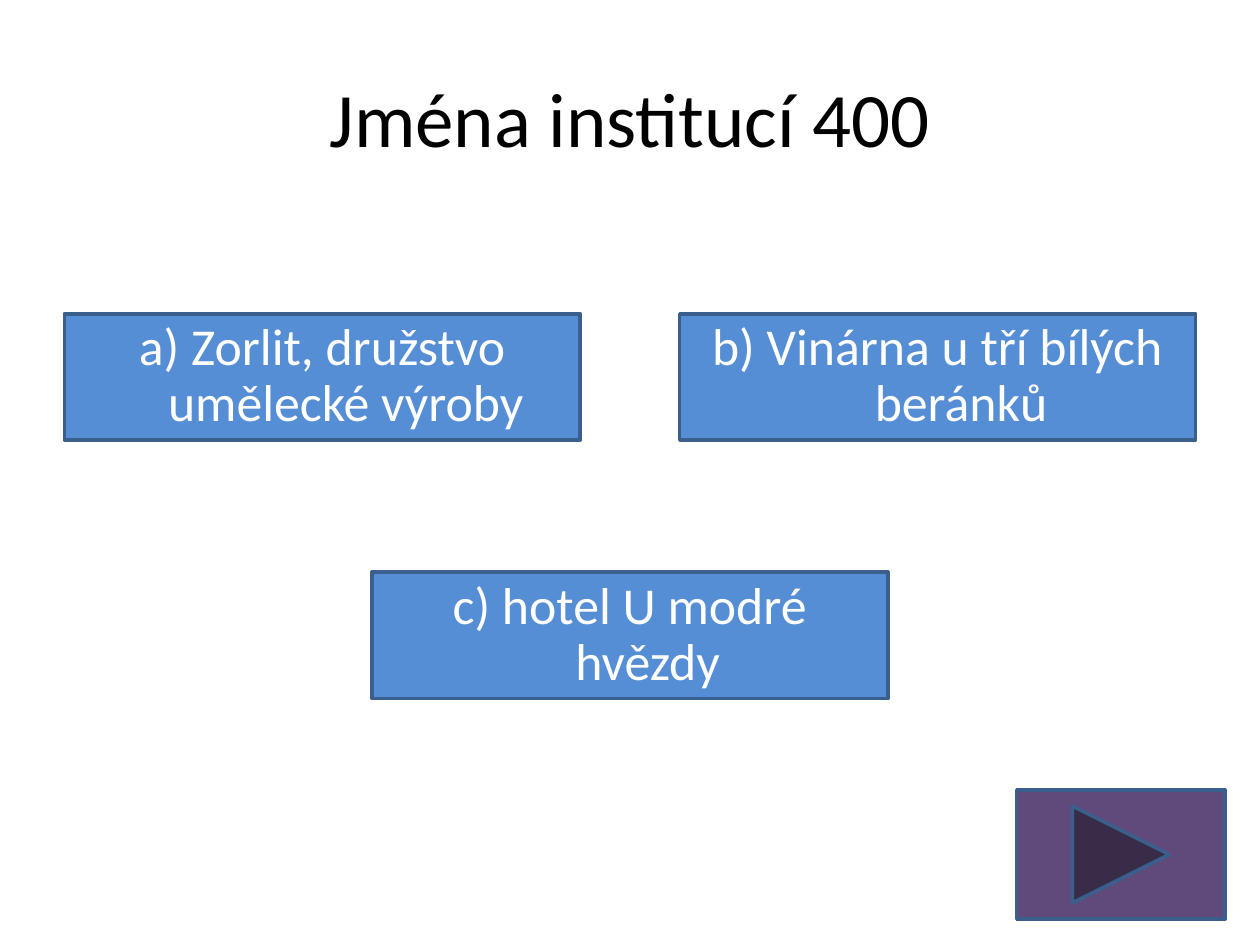
from pptx import Presentation
from pptx.dml.color import RGBColor
from pptx.enum.shapes import MSO_SHAPE
from pptx.enum.text import MSO_ANCHOR, PP_ALIGN
from pptx.util import Pt

BLANK_BUTTON = MSO_SHAPE.ACTION_BUTTON_CUSTOM
NEXT_BUTTON = MSO_SHAPE.ACTION_BUTTON_FORWARD_OR_NEXT
CENTER = PP_ALIGN.CENTER
MIDDLE = MSO_ANCHOR.MIDDLE

COLORS = {
    "title": "000000",
    "answer": "558ED5",
    "answer_text": "FFFFFF",
    "next": "604A7B",
    "line": "3A5F8C",
}
TITLE_FONT = {"name": "Calibri", "size": Pt(44)}
ANSWER_FONT = {"name": "Calibri", "size": Pt(29.6)}
ANSWER_PARAGRAPH = {"alignment": CENTER, "line_spacing": 0.9, "space_before": Pt(6)}

SLIDE_W, SLIDE_H = 720, 540
ANSWER_W, ANSWER_H = 294.8, 72.2
HANGING = 27


def rgb(name):
    return RGBColor.from_string(COLORS[name])


def set_attrs(obj, values):
    for name, value in values.items():
        setattr(obj, name, value)


def place(sp, box):
    sp.left, sp.top, sp.width, sp.height = (Pt(v) for v in box)


def write(sp, text, font, color, paragraph):
    tf = sp.text_frame
    set_attrs(tf, {"word_wrap": True, "vertical_anchor": MIDDLE})
    p = tf.paragraphs[0]
    set_attrs(p, paragraph)
    r = p.add_run()
    r.text = text
    set_attrs(r.font, font)
    r.font.color.rgb = rgb(color)
    return p


def add_button(s, kind, box, fill):
    sp = s.shapes.add_shape(kind, *(Pt(v) for v in box))
    sp.shadow.inherit = False
    sp.fill.solid()
    sp.fill.fore_color.rgb = rgb(fill)
    sp.line.color.rgb = rgb("line")
    sp.line.width = Pt(2)
    return sp


def add_title(s, box, text):
    sp = s.shapes.title
    place(sp, box)
    write(sp, text, TITLE_FONT, "title", {"alignment": CENTER})


def add_answer(s, box, text):
    sp = add_button(s, BLANK_BUTTON, box, "answer")
    p = write(sp, text, ANSWER_FONT, "answer_text", ANSWER_PARAGRAPH)
    # Hanging indent
    pPr = p._p.get_or_add_pPr()
    pPr.set("marL", str(Pt(HANGING)))
    pPr.set("indent", str(-Pt(HANGING)))


def add_answers(s, box, texts):
    """Two answers at the upper corners of the box, the third centred below."""
    left, top, width, height = box
    free_w, free_h = width - ANSWER_W, height - ANSWER_H
    offsets = [(0, 0), (free_w, 0), (free_w / 2, free_h)]
    for (dx, dy), text in zip(offsets, texts):
        add_answer(s, (left + dx, top + dy, ANSWER_W, ANSWER_H), text)


def main():
    prs = Presentation()
    prs.slide_width, prs.slide_height = Pt(SLIDE_W), Pt(SLIDE_H)
    s = prs.slides.add_slide(prs.slide_layouts[5])

    # Question title
    add_title(s, (36, 21.6, 648, 90), "Jména institucí 400")

    # Answer buttons
    add_answers(s, (36.8, 179.3, 646.4, 219.8), [
        "a) Zorlit, družstvo umělecké výroby",
        "b) Vinárna u tří bílých beránků",
        "c) hotel U modré hvězdy ",
    ])

    # Button to the next slide
    add_button(s, NEXT_BUTTON, (581, 451.4, 119, 73.8), "next")

    prs.save("out.pptx")


if __name__ == "__main__":
    main()
